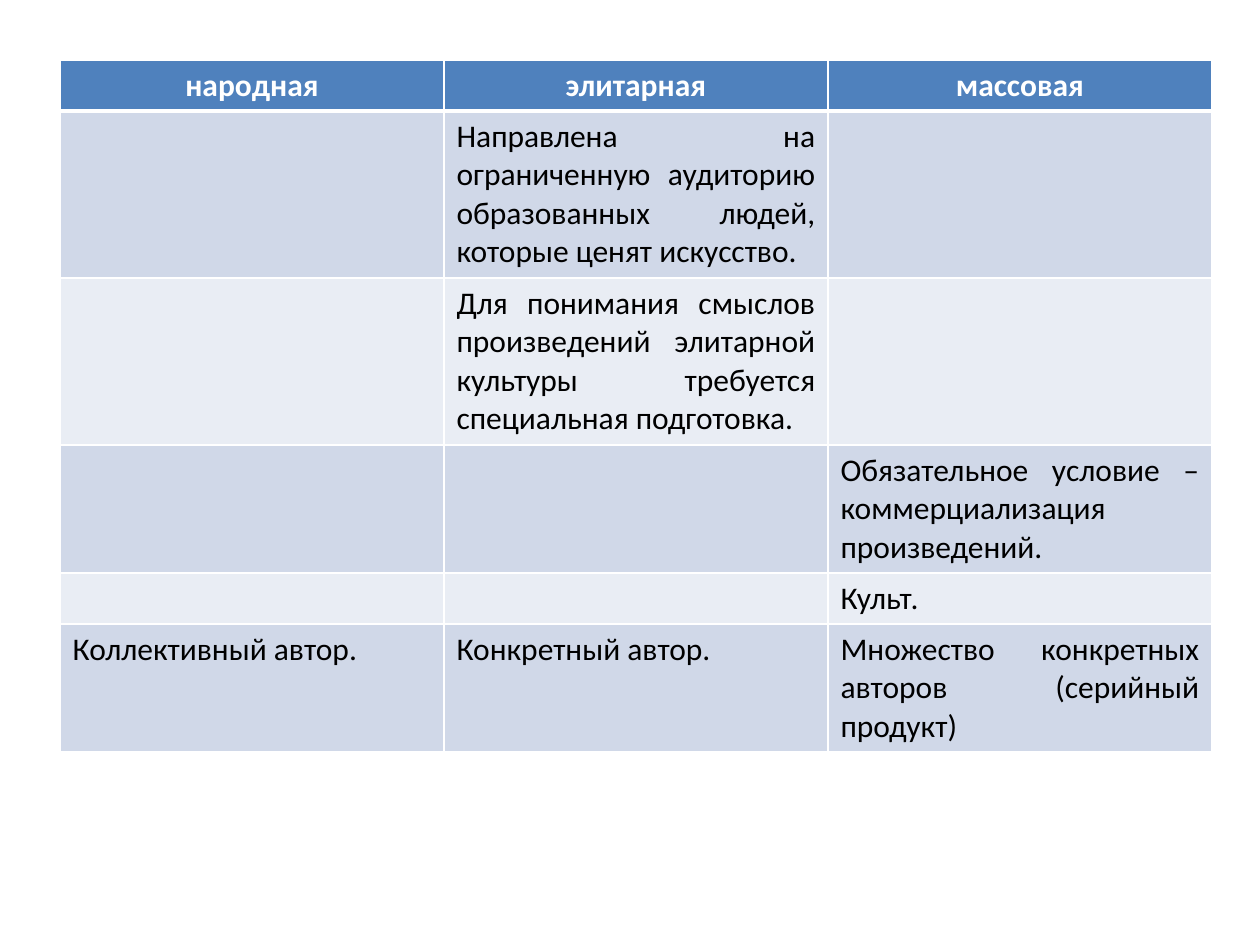
from lxml import etree
from pptx import Presentation
from pptx.dml.color import RGBColor
from pptx.enum.text import PP_ALIGN
from pptx.oxml.ns import qn
from pptx.util import Emu, Pt

CENTER = PP_ALIGN.CENTER
JUSTIFY = PP_ALIGN.JUSTIFY
EMU_PER_PX = 914400 / 126
BLANK_LAYOUT = 6
FONT = "Calibri"
FONT_SIZE = 18

COLORS = {
    "header": "4F81BD",
    "odd": "D0D8E8",
    "even": "E9EDF4",
    "white": "FFFFFF",
    "black": "000000",
}

COLUMN_WIDTH = 384
ROW_HEIGHTS = [50, 167, 167, 128, 51, 127]
ROWS = [
    ["народная", "элитарная", "массовая"],
    ["", "Направлена на ограниченную аудиторию образованных людей, которые ценят искусство.", ""],
    ["", "Для понимания смыслов произведений элитарной культуры требуется специальная подготовка.", ""],
    ["", "", "Обязательное условие – коммерциализация произведений."],
    ["", "", "Культ."],
    ["Коллективный автор.", "Конкретный автор.", "Множество конкретных авторов (серийный продукт)"],
]


def px(length):
    return Emu(round(length * EMU_PER_PX))


def color(name):
    return RGBColor.from_string(COLORS[name])


def set_borders(cell, widths):
    properties = cell._tc.get_or_add_tcPr()
    for side, width in widths.items():
        line = etree.SubElement(properties, qn(f"a:ln{side}"), w=str(Pt(width)))
        fill = etree.SubElement(line, qn("a:solidFill"))
        etree.SubElement(fill, qn("a:srgbClr"), val=COLORS["white"])


def write_text(cell, text, is_header):
    paragraph = cell.text_frame.paragraphs[0]
    paragraph.alignment = CENTER if is_header else JUSTIFY
    paragraph.font.size = Pt(FONT_SIZE)
    if not text:
        return
    run = paragraph.add_run()
    run.text = text
    run.font.name = FONT
    run.font.size = Pt(FONT_SIZE)
    run.font.bold = is_header
    run.font.color.rgb = color("white" if is_header else "black")


def format_cell(cell, text, row_index):
    is_header = row_index == 0
    set_borders(cell, {
        "L": 1,
        "R": 1,
        "T": 3 if row_index == 1 else 1,
        "B": 3 if is_header else 1,
    })
    cell.fill.solid()
    band = "odd" if row_index % 2 else "even"
    cell.fill.fore_color.rgb = color("header" if is_header else band)
    write_text(cell, text, is_header)


def add_culture_table(slide):
    column_count = len(ROWS[0])
    frame = slide.shapes.add_table(
        len(ROWS), column_count, px(60), px(60),
        px(COLUMN_WIDTH * column_count), px(sum(ROW_HEIGHTS)),
    )
    table = frame.table
    for column in table.columns:
        column.width = px(COLUMN_WIDTH)
    for row_index, (texts, height) in enumerate(zip(ROWS, ROW_HEIGHTS)):
        table.rows[row_index].height = px(height)
        for column_index, text in enumerate(texts):
            format_cell(table.cell(row_index, column_index), text, row_index)


def main():
    presentation = Presentation()
    presentation.slide_width = px(1260)
    presentation.slide_height = px(945)
    slide = presentation.slides.add_slide(presentation.slide_layouts[BLANK_LAYOUT])
    add_culture_table(slide)
    presentation.save("out.pptx")


if __name__ == "__main__":
    main()
